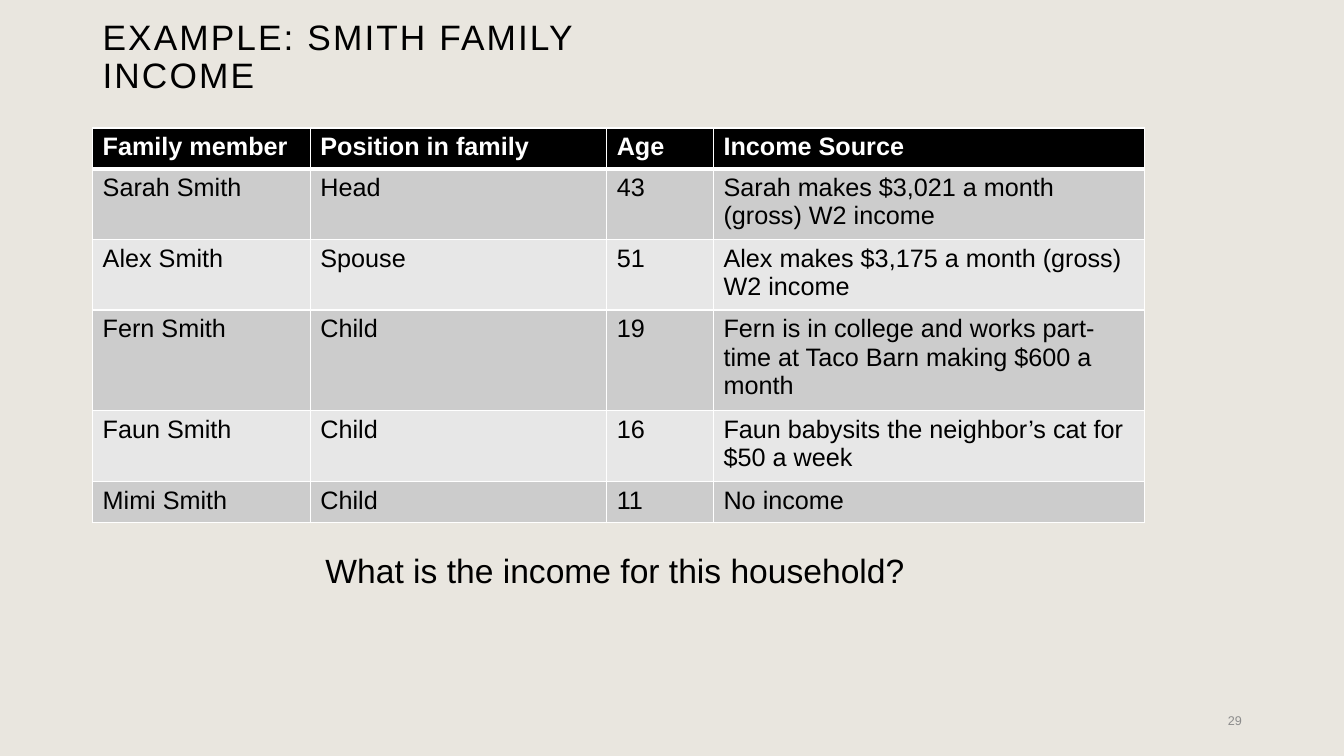
from lxml.etree import SubElement
from pptx import Presentation
from pptx.dml.color import RGBColor
from pptx.enum.text import MSO_ANCHOR, PP_ALIGN
from pptx.oxml.ns import qn
from pptx.util import Pt

FONT = "Arial"
BLACK, WHITE, GREY = "000000", "FFFFFF", "8C8C8C"
BACKGROUND = "E9E6DF"
BANDS = ["CCCCCC", "E7E7E7"]

TITLE = "EXAMPLE: SMITH FAMILY INCOME"
QUESTION = "What is the income for this household?"
PAGE = "29"
FAMILY = [
    ("Family member", "Position in family", "Age", "Income Source"),
    ("Sarah Smith", "Head", "43", "Sarah makes $3,021 a month (gross) W2 income"),
    ("Alex Smith", "Spouse", "51", "Alex makes $3,175 a month (gross) W2 income"),
    ("Fern Smith", "Child", "19",
     "Fern is in college and works part-time at Taco Barn making $600 a month"),
    ("Faun Smith", "Child", "16", "Faun babysits the neighbor’s cat for $50 a week"),
    ("Mimi Smith", "Child", "11", "No income"),
]
COL_WIDTHS = [155.5, 211.7, 76.3, 307.8]
ROW_HEIGHT = 29.2
TABLE_LEFT, TABLE_TOP = 66.2, 91.4


def color(value):
    return RGBColor.from_string(value)


def add_run(p, text, size, ink, bold=False):
    r = p.add_run()
    r.text = text
    r.font.name = FONT
    r.font.size = Pt(size)
    r.font.bold = bold
    r.font.color.rgb = color(ink)
    return r


def add_text(s, box, text, size, ink, anchor=MSO_ANCHOR.TOP, align=PP_ALIGN.LEFT):
    tf = s.shapes.add_textbox(*[Pt(v) for v in box]).text_frame
    tf.word_wrap = True
    tf.vertical_anchor = anchor
    p = tf.paragraphs[0]
    p.alignment = align
    return p, add_run(p, text, size, ink)


def add_border(cell, side, width):
    ln = SubElement(cell._tc.get_or_add_tcPr(), qn(f"a:ln{side}"), w=str(Pt(width)))
    SubElement(SubElement(ln, qn("a:solidFill")), qn("a:srgbClr"), val=WHITE)


def add_family_table(s):
    table = s.shapes.add_table(
        len(FAMILY), len(COL_WIDTHS), Pt(TABLE_LEFT), Pt(TABLE_TOP),
        Pt(sum(COL_WIDTHS)), Pt(ROW_HEIGHT * len(FAMILY))).table
    for column, width in zip(table.columns, COL_WIDTHS):
        column.width = Pt(width)
    for i, member in enumerate(FAMILY):
        table.rows[i].height = Pt(ROW_HEIGHT)
        header = i == 0
        fill = BLACK if header else BANDS[(i - 1) % 2]
        top, bottom = 3 if i == 1 else 1, 3 if header else 1
        for j, text in enumerate(member):
            cell = table.cell(i, j)
            for side, width in zip("LRTB", (1, 1, top, bottom)):
                add_border(cell, side, width)
            cell.fill.solid()
            cell.fill.fore_color.rgb = color(fill)
            add_run(cell.text_frame.paragraphs[0], text, 18,
                    WHITE if header else BLACK, header)


def main():
    prs = Presentation()
    prs.slide_width, prs.slide_height = Pt(960), Pt(540)
    s = prs.slides.add_slide(prs.slide_layouts[6])
    s.background.fill.solid()
    s.background.fill.fore_color.rgb = color(BACKGROUND)

    p, r = add_text(s, (66.2, 26.6, 445, 45.4), TITLE, 25.2, BLACK, MSO_ANCHOR.BOTTOM)
    p.line_spacing = 0.9
    r.font._element.set("spc", "150")
    add_family_table(s)
    add_text(s, (678.2, 500.4, 216, 28.8), PAGE, 9, GREY,
             MSO_ANCHOR.MIDDLE, PP_ALIGN.RIGHT)
    add_text(s, (225.4, 389.5, 432.7, 36), QUESTION, 24, BLACK)
    prs.save("out.pptx")


if __name__ == "__main__":
    main()
